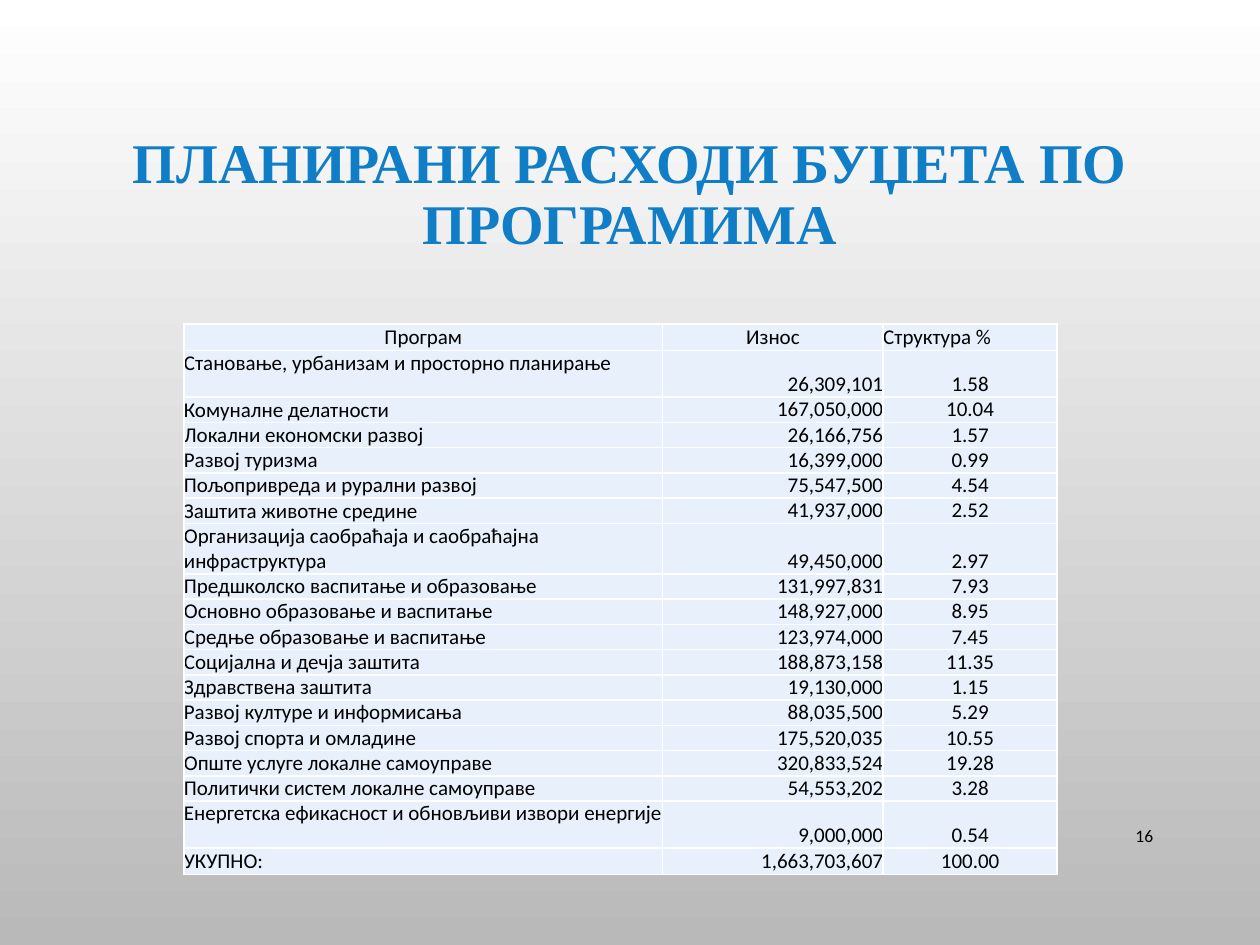
from lxml.etree import SubElement
from pptx import Presentation
from pptx.dml.color import RGBColor
from pptx.enum.text import MSO_ANCHOR as Anchor, PP_ALIGN as Align
from pptx.oxml import parse_xml
from pptx.oxml.ns import nsdecls, qn
from pptx.util import Inches, Pt

WHITE = RGBColor(0xFF, 0xFF, 0xFF)
GRAY = RGBColor(0xB9, 0xB9, 0xB9)
BLACK = RGBColor(0x00, 0x00, 0x00)
TITLE_BLUE = RGBColor(0x10, 0x7E, 0xC6)
CELL_BLUE = RGBColor(0xE8, 0xF0, 0xFC)

HEADER = ("Програм", "Износ", "Структура %")
PROGRAMS = [
    ("Становање, урбанизам и просторно планирање", "26,309,101", "1.58"),
    ("Комуналне делатности", "167,050,000", "10.04"),
    ("Локални економски развој", "26,166,756", "1.57"),
    ("Развој туризма", "16,399,000", "0.99"),
    ("Пољопривреда и рурални развој", "75,547,500", "4.54"),
    ("Заштита животне средине", "41,937,000", "2.52"),
    ("Организација саобраћаја и саобраћајна инфраструктура", "49,450,000", "2.97"),
    ("Предшколско васпитање и образовање", "131,997,831", "7.93"),
    ("Основно образовање и васпитање", "148,927,000", "8.95"),
    ("Средње образовање и васпитање", "123,974,000", "7.45"),
    ("Социјална и дечја заштита", "188,873,158", "11.35"),
    ("Здравствена заштита", "19,130,000", "1.15"),
    ("Развој културе и информисања", "88,035,500", "5.29"),
    ("Развој спорта и омладине", "175,520,035", "10.55"),
    ("Опште услуге локалне самоуправе", "320,833,524", "19.28"),
    ("Политички систем локалне самоуправе", "54,553,202", "3.28"),
    ("Енергетска ефикасност и обновљиви извори енергије", "9,000,000", "0.54"),
]
TOTAL = ("УКУПНО:", "1,663,703,607", "100.00")

# Lengths are in grid units: 100 columns by 75 rows
COLUMN_WIDTHS = (38, 17.5, 13.8)
EDGE_ROW, SINGLE_ROW, DOUBLE_ROW = 2.1, 1.9, 3.72
LONG_NAME = 40


class BudgetSlide:
    def __init__(self, presentation):
        self.unit = presentation.slide_width / 100
        self.slide = presentation.slides.add_slide(presentation.slide_layouts[6])

    def length(self, units):
        return round(units * self.unit)

    def background(self, top, bottom):
        fill = self.slide.background.fill
        fill.gradient()
        fill.gradient_angle = 270
        for stop, position, color in zip(fill.gradient_stops, (0, 1), (top, bottom)):
            stop.position = position
            stop.color.rgb = color

    def format_text(self, paragraph, align, size, font="Calibri", color=BLACK, bold=False):
        paragraph.alignment = align
        for run in paragraph.runs:
            run.font.name = font
            run.font.size = Pt(size)
            run.font.bold = bold
            run.font.color.rgb = color

    def text(self, words, box, align, size, **style):
        shape = self.slide.shapes.add_textbox(*map(self.length, box))
        frame = shape.text_frame
        frame.word_wrap = True
        frame.vertical_anchor = Anchor.MIDDLE
        frame.text = words
        paragraph = frame.paragraphs[0]
        self.format_text(paragraph, align, size, **style)
        return paragraph

    def cell(self, cell, words, align, anchor):
        cell.text = words
        cell.vertical_anchor = anchor
        cell.margin_left = cell.margin_right = cell.margin_top = cell.margin_bottom = 0
        self.format_text(cell.text_frame.paragraphs[0], align, 12)
        # Borders come before the fill in the cell properties
        properties = cell._tc.get_or_add_tcPr()
        for side in ("lnL", "lnR", "lnT", "lnB"):
            line = SubElement(properties, qn(f"a:{side}"), w=str(Pt(1)))
            line.append(parse_xml(
                f'<a:solidFill {nsdecls("a")}><a:srgbClr val="{WHITE}"/></a:solidFill>'))
        cell.fill.solid()
        cell.fill.fore_color.rgb = CELL_BLUE

    def table(self, left, top, rows, widths, heights, placement):
        box = map(self.length, (left, top, sum(widths), sum(heights)))
        table = self.slide.shapes.add_table(len(rows), len(widths), *box).table
        for column, width in zip(table.columns, widths):
            column.width = self.length(width)
        for row, height in zip(table.rows, heights):
            row.height = self.length(height)
        for r, values in enumerate(rows):
            for c, words in enumerate(values):
                self.cell(table.cell(r, c), words, *placement(r, c))


def placement(row, column):
    """Alignment and anchor of a table cell."""
    if row == 0:
        return ((Align.CENTER, Anchor.MIDDLE), (Align.CENTER, Anchor.MIDDLE),
                (Align.LEFT, Anchor.BOTTOM))[column]
    is_program = column == 0 and row <= len(PROGRAMS)
    return ((Align.LEFT, Align.RIGHT, Align.CENTER)[column],
            Anchor.TOP if is_program else Anchor.BOTTOM)


def main():
    presentation = Presentation()
    presentation.slide_width, presentation.slide_height = Inches(10), Inches(7.5)
    page = BudgetSlide(presentation)
    page.background(WHITE, GRAY)

    # Title
    title = page.text("ПЛАНИРАНИ РАСХОДИ БУЏЕТА ПО ПРОГРАМИМА", (7.5, 6.8, 85, 17.5),
                      Align.CENTER, 32, font="Times New Roman", color=TITLE_BLUE, bold=True)
    title.line_spacing = 0.9

    # Slide number
    number = page.text("16", (86.2, 64.3, 6.3, 4), Align.RIGHT, 10)
    number.space_after = Pt(6)

    # Budget table: long program names get a double row
    heights = [DOUBLE_ROW if len(name) > LONG_NAME else SINGLE_ROW for name, *_ in PROGRAMS]
    page.table(14.6, 25.7, [HEADER, *PROGRAMS, TOTAL], COLUMN_WIDTHS,
               [EDGE_ROW, *heights, EDGE_ROW], placement)

    presentation.save("out.pptx")


if __name__ == "__main__":
    main()
